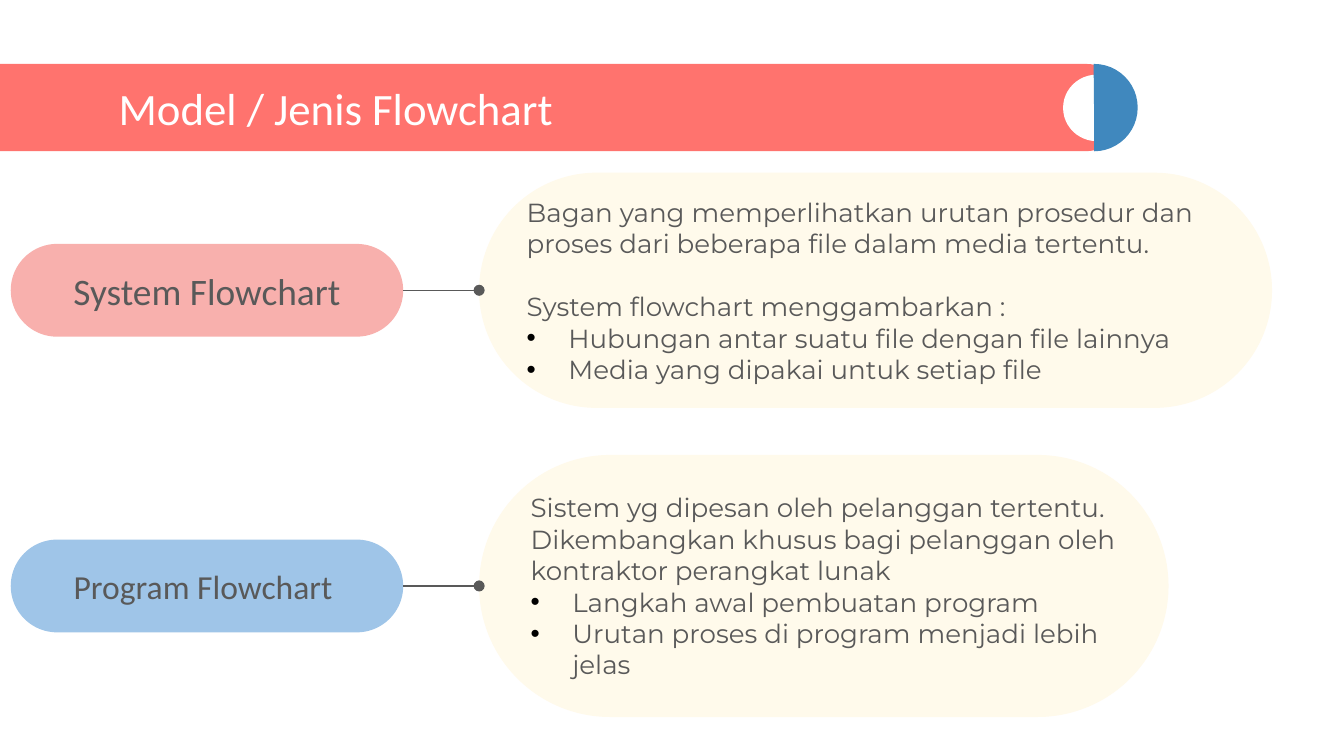
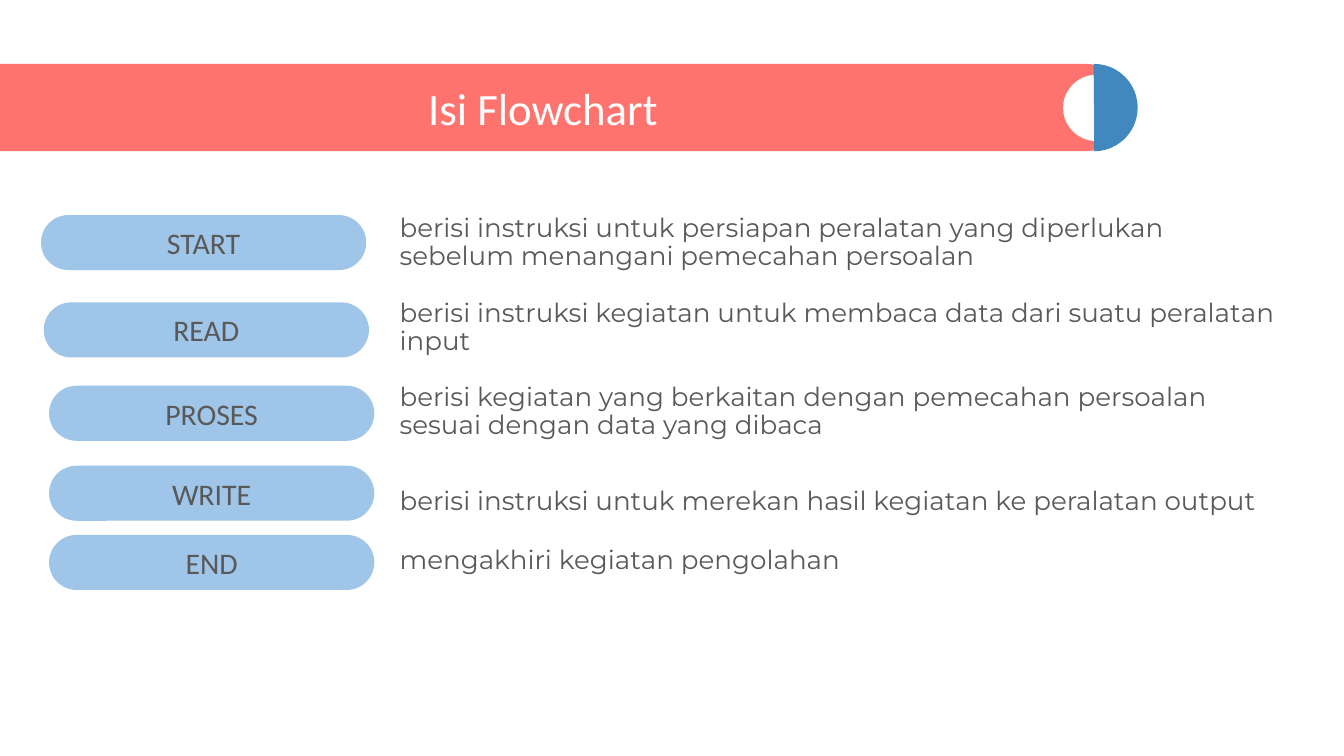
"""Build two slides that explain flowchart types and flowchart contents."""
from lxml.etree import SubElement
from pptx import Presentation
from pptx.dml.color import RGBColor
from pptx.enum.shapes import MSO_CONNECTOR, MSO_SHAPE
from pptx.enum.text import MSO_ANCHOR, PP_ALIGN
from pptx.oxml.ns import qn
from pptx.util import Pt

PX = 4572
CORAL = RGBColor(0xFF, 0x73, 0x6E)
BLUE = RGBColor(0x40, 0x88, 0xBE)
PINK = RGBColor(0xF8, 0xB0, 0xAD)
SKY = RGBColor(0x9F, 0xC5, 0xE8)
CREAM = RGBColor(0xFF, 0xFA, 0xEB)
GREY = RGBColor(0x59, 0x59, 0x59)
WHITE = RGBColor(0xFF, 0xFF, 0xFF)

FRAME = {"word_wrap": True, "vertical_anchor": MSO_ANCHOR.MIDDLE}
FRAME.update({f"margin_{side}": 20 * PX for side in ("left", "top", "right", "bottom")})
TITLE = {"name": "Calibri", "size": Pt(24)}
BODY = {"name": "Montserrat", "size": Pt(14)}
LEFT = {"alignment": PP_ALIGN.LEFT}
CENTER = {"alignment": PP_ALIGN.CENTER}
BULLET = {"alignment": PP_ALIGN.LEFT, "margin": 62, "indent": -62, "bullet": "•"}


def add_block(slide, preset, box, fill):
    shape = slide.shapes.add_shape(preset, *(length * PX for length in box))
    shape.shadow.inherit = False
    shape.fill.solid()
    shape.fill.fore_color.rgb = fill
    shape.line.fill.background()
    if preset == MSO_SHAPE.ROUNDED_RECTANGLE:
        shape.adjustments[0] = 0.5
    return shape


def write(shape, lines, font, color=GREY, anchor=MSO_ANCHOR.MIDDLE):
    frame = shape.text_frame
    for name, value in {**FRAME, "vertical_anchor": anchor}.items():
        setattr(frame, name, value)
    for index, (text, layout) in enumerate(lines):
        paragraph = frame.add_paragraph() if index else frame.paragraphs[0]
        run = paragraph.add_run()
        run.text = text
        run.font.color.rgb = color
        for name, value in font.items():
            setattr(run.font, name, value)
        for name in ("alignment", "space_before", "line_spacing"):
            setattr(paragraph, name, layout.get(name))
        properties = paragraph._p.get_or_add_pPr()
        properties.set("marL", str(layout.get("margin", 0) * PX))
        properties.set("indent", str(layout.get("indent", 0) * PX))
        if "bullet" in layout:
            bullet_color = SubElement(properties, qn("a:buClr"))
            SubElement(bullet_color, qn("a:srgbClr"), val="000000")
            SubElement(properties, qn("a:buFont"), typeface="Arial")
            SubElement(properties, qn("a:buChar"), char=layout["bullet"])


presentation = Presentation()
presentation.slide_width = 2000 * PX
presentation.slide_height = 1125 * PX

titles = [
    ("Model / Jenis Flowchart", (157, 119, 1394, 82), LEFT),
    ("Isi Flowchart", (67, 119, 1482, 82), CENTER),
]
slides = []
for title, box, layout in titles:
    slide = presentation.slides.add_slide(presentation.slide_layouts[6])
    slides.append(slide)
    add_block(slide, MSO_SHAPE.ROUNDED_RECTANGLE, (-64, 95, 1744, 130), CORAL)
    add_block(slide, MSO_SHAPE.OVAL, (1582, 111, 100, 99), WHITE).rotation = 180
    half_disc = add_block(slide, MSO_SHAPE.PIE, (1563, 95, 130, 130), BLUE)
    half_disc.rotation = 180
    half_disc.adjustments[0] = 53.67
    half_disc.adjustments[1] = 162
    title_box = slide.shapes.add_textbox(*(length * PX for length in box))
    write(title_box, [(title, layout)], TITLE, WHITE)

models_slide, contents_slide = slides

system_lines = [
    ("Bagan yang memperlihatkan urutan prosedur dan proses dari beberapa file dalam media tertentu.", LEFT),
    ("System flowchart menggambarkan :", {**LEFT, "space_before": Pt(17)}),
    ("Hubungan antar suatu file dengan file lainnya", BULLET),
    ("Media yang dipakai untuk setiap file", BULLET),
]
program_lines = [
    ("Sistem yg dipesan oleh pelanggan tertentu. Dikembangkan khusus bagi pelanggan oleh "
     "kontraktor perangkat lunak", LEFT),
    ("Langkah awal pembuatan program", BULLET),
    ("Urutan proses di program menjadi lebih jelas", BULLET),
]
models = [
    ("System Flowchart", 20, PINK, 363, (713, 257, 1180, 350), system_lines),
    ("Program Flowchart ", 18, SKY, 803, (713, 677, 1026, 390), program_lines),
]
for name, size, fill, top, card_box, lines in models:
    pill = add_block(models_slide, MSO_SHAPE.ROUNDED_RECTANGLE, (16, top, 584, 138), fill)
    write(pill, [(name, CENTER)], {"name": "Calibri", "size": Pt(size)})
    card = add_block(models_slide, MSO_SHAPE.ROUNDED_RECTANGLE, card_box, CREAM)
    write(card, lines, BODY)
    middle = pill.top + pill.height // 2
    connector = models_slide.shapes.add_connector(
        MSO_CONNECTOR.STRAIGHT, pill.left + pill.width, middle, card.left, middle)
    connector.line.color.rgb = GREY
    connector.line.width = Pt(0.75)
    SubElement(connector.line._get_or_add_ln(), qn("a:tailEnd"), type="oval")
    SubElement(connector._element.spPr, qn("a:effectLst"))

steps = [
    ("START", 61, 320, 0, 0.9,
     "berisi instruksi untuk persiapan peralatan yang diperlukan sebelum menangani pemecahan persoalan"),
    ("READ", 65, 450, 15, 0.9,
     "berisi instruksi kegiatan untuk membaca data dari suatu peralatan input"),
    ("PROSES", 73, 574, 15, 0.9,
     "berisi kegiatan yang berkaitan dengan pemecahan persoalan sesuai dengan data yang dibaca"),
    ("WRITE", 73, 693, 15, 1.5,
     "berisi instruksi untuk merekan hasil kegiatan ke peralatan output"),
    ("END", 73, 796, 17, 0.9, "mengakhiri kegiatan pengolahan"),
]
descriptions = []
for name, left, top, gap, spacing, description in steps:
    pill = add_block(contents_slide, MSO_SHAPE.ROUNDED_RECTANGLE, (left, top, 484, 82), SKY)
    write(pill, [(name, CENTER)], {"name": "Calibri", "size": Pt(16)})
    descriptions.append((description, {
        **LEFT, "margin": 30, "space_before": Pt(gap), "line_spacing": spacing}))
description_box = contents_slide.shapes.add_textbox(
    *(length * PX for length in (545, 300, 1388, 824)))
write(description_box, descriptions, BODY, anchor=MSO_ANCHOR.TOP)

presentation.save("out.pptx")
